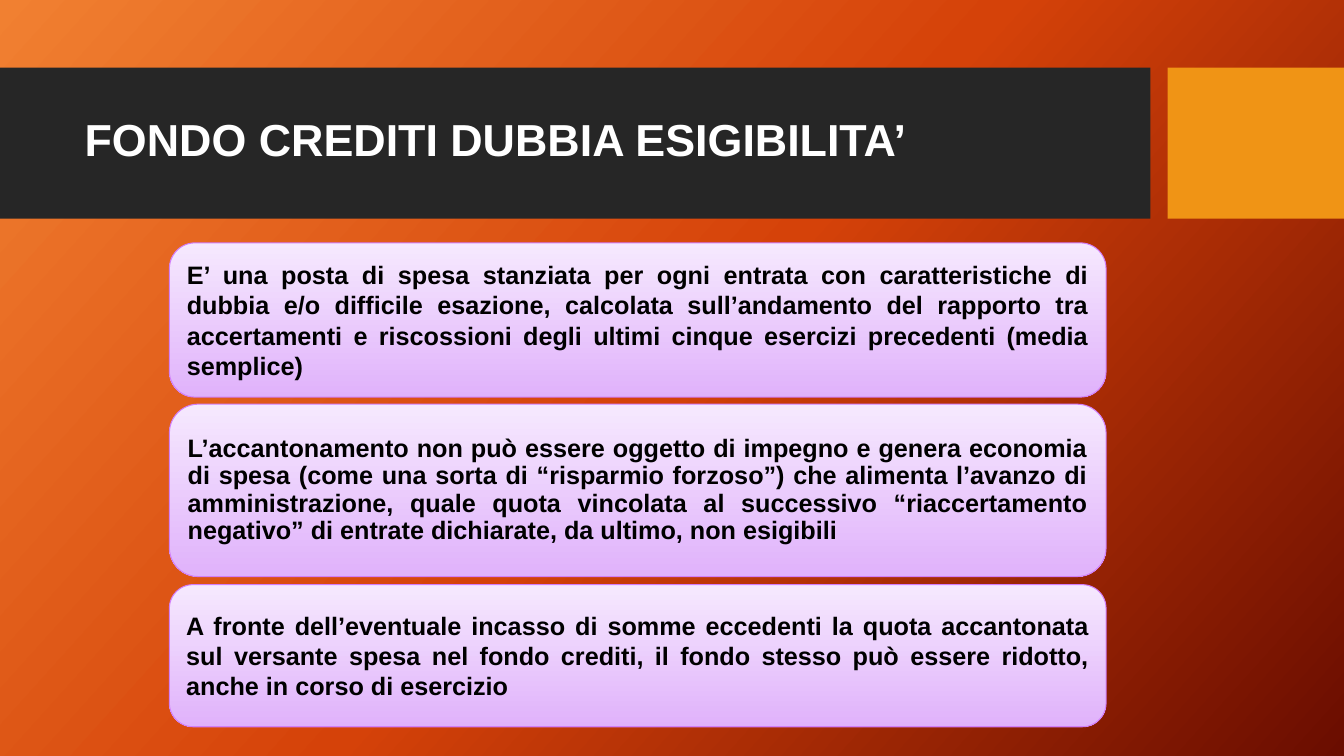
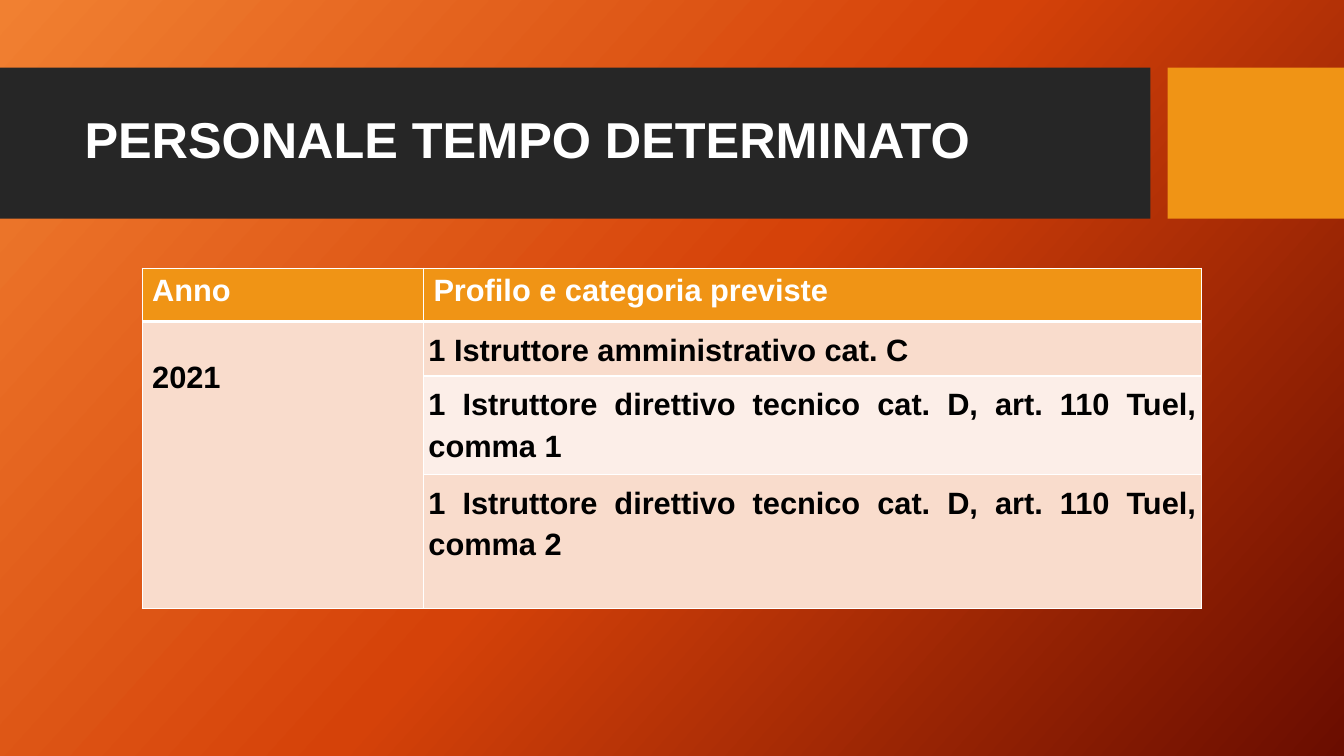
"""Build two budget slides: doubtful credit fund and fixed-term staff."""
import pptx
import pptx.dml.color
import pptx.enum.shapes
import pptx.enum.text
import pptx.oxml.ns
import pptx.util
from lxml import etree

Inches, Pt = pptx.util.Inches, pptx.util.Pt
PP_ALIGN = pptx.enum.text.PP_ALIGN
MIDDLE = pptx.enum.text.MSO_ANCHOR.MIDDLE
SHAPES = pptx.enum.shapes.MSO_SHAPE
qn = pptx.oxml.ns.qn

COLORS = {
    "band": "262626", "accent": "F09415", "white": "FFFFFF", "black": "000000",
    "card_line": "D17DF9", "row_dark": "F9DCCC", "row_light": "FCEEE8",
}
BACKGROUND = [(0, "F18031"), (50, "D54209"), (100, "6A0D00")]
CARD_GRADIENT = [(0, "F6E9FE"), (100, "E0B2FB")]
FONT = "Arial"

FUND_TITLE = ("FONDO CREDITI DUBBIA ESIGIBILITA’", 32)
FUND_CARDS = [
    (2.41, 1.53, None,
     "E’ una posta di spesa stanziata per ogni entrata con caratteristiche di dubbia e/o "
     "difficile esazione, calcolata sull’andamento del rapporto tra accertamenti e "
     "riscossioni degli ultimi cinque esercizi precedenti (media semplice)"),
    (4.01, 1.71, 0.9,
     "L’accantonamento non può essere oggetto di impegno e genera economia di spesa (come "
     "una sorta di “risparmio forzoso”) che alimenta l’avanzo di amministrazione, quale "
     "quota vincolata al successivo “riaccertamento negativo” di entrate dichiarate, da "
     "ultimo, non esigibili"),
    (5.8, 1.41, None,
     "A fronte dell’eventuale incasso di somme eccedenti la quota accantonata sul versante "
     "spesa nel fondo crediti, il fondo stesso può essere ridotto, anche in corso di "
     "esercizio"),
]
STAFF_TITLE = ("PERSONALE TEMPO DETERMINATO", 36)
STAFF_HEADER = ["Anno", "Profilo e categoria previste"]
STAFF_YEAR = "2021"
STAFF_PROFILES = [
    "1 Istruttore amministrativo cat. C",
    "1 Istruttore direttivo tecnico cat. D, art. 110 Tuel, comma 1",
    "1 Istruttore direttivo tecnico cat. D, art. 110 Tuel, comma 2",
]
STAFF_WIDTHS = [2.79, 7.72]
STAFF_HEIGHTS = [0.53, 0.52, 0.92, 1.33]


def rgb(name):
    return pptx.dml.color.RGBColor.from_string(COLORS[name])


def box(*lengths):
    return [Inches(length) for length in lengths]


def paint_gradient(fill, owner, stops, clockwise):
    fill.gradient()
    fill.gradient_angle = 360 - clockwise
    stop_list = next(owner.iter(qn("a:gsLst")))
    for old_stop in list(stop_list):
        stop_list.remove(old_stop)
    for percent, color in stops:
        stop = etree.SubElement(stop_list, qn("a:gs"), pos=str(percent * 1000))
        etree.SubElement(stop, qn("a:srgbClr"), val=color)


def write(frame, text, size, color, align=PP_ALIGN.LEFT, spacing=None):
    frame.word_wrap = True
    paragraph = frame.paragraphs[0]
    paragraph.alignment = align
    if spacing:
        paragraph.line_spacing = spacing
    run = paragraph.add_run()
    run.text = text
    run.font.name, run.font.size, run.font.bold = FONT, Pt(size), True
    run.font.color.rgb = rgb(color)


def add_titled_slide(deck, title, size):
    slide = deck.slides.add_slide(deck.slide_layouts[6])
    for left, width, color in [(0, 11.41, "band"), (11.58, 1.75, "accent")]:
        band = slide.shapes.add_shape(SHAPES.RECTANGLE, *box(left, 0.67, width, 1.5))
        band.shadow.inherit = False
        band.fill.solid()
        band.fill.fore_color.rgb = rgb(color)
        band.line.fill.background()
    heading = slide.shapes.add_textbox(*box(0.74, 0.82, 10.51, 1.18)).text_frame
    heading.vertical_anchor = MIDDLE
    write(heading, title, size, "white", spacing=0.9)
    return slide


def add_card(slide, top, height, spacing, text):
    card = slide.shapes.add_shape(SHAPES.ROUNDED_RECTANGLE, *box(1.68, top, 9.29, height))
    card.shadow.inherit = False
    paint_gradient(card.fill, card.element, CARD_GRADIENT, 90)
    card.line.color.rgb = rgb("card_line")
    card.line.width = Pt(0.75)
    card.text_frame.vertical_anchor = MIDDLE
    write(card.text_frame, text, 18, "black", PP_ALIGN.JUSTIFY, spacing)


def style_cell(cell, fill, top, bottom):
    cell.fill.solid()
    cell.fill.fore_color.rgb = rgb(fill)
    properties = cell._tc.get_or_add_tcPr()
    sides = [("L", 1), ("R", 1), ("T", top), ("B", bottom)]
    for index, (side, width) in enumerate(sides):
        border = etree.Element(qn(f"a:ln{side}"), w=str(Pt(width)))
        solid = etree.SubElement(border, qn("a:solidFill"))
        etree.SubElement(solid, qn("a:srgbClr"), val=COLORS["white"])
        properties.insert(index, border)


def add_staff_table(slide):
    area = box(1.41, 2.66, sum(STAFF_WIDTHS), sum(STAFF_HEIGHTS))
    staff = slide.shapes.add_table(len(STAFF_HEIGHTS), len(STAFF_WIDTHS), *area).table
    for column, width in zip(staff.columns, STAFF_WIDTHS):
        column.width = Inches(width)
    for row, height in zip(staff.rows, STAFF_HEIGHTS):
        row.height = Inches(height)

    for index, label in enumerate(STAFF_HEADER):
        header = staff.cell(0, index)
        style_cell(header, "accent", 1, 3)
        write(header.text_frame, label, 22, "white")

    for row, profile in enumerate(STAFF_PROFILES, 1):
        top = 3 if row == 1 else 1
        style_cell(staff.cell(row, 0), "row_dark", top, 1)
        cell = staff.cell(row, 1)
        style_cell(cell, "row_dark" if row % 2 else "row_light", top, 1)
        cell.margin_left = cell.margin_right = Inches(0.05)
        cell.margin_top = cell.margin_bottom = Inches(0.05)
        write(cell.text_frame, profile, 22, "black", PP_ALIGN.JUSTIFY, 1.2)

    year = staff.cell(1, 0)
    year.merge(staff.cell(len(STAFF_PROFILES), 0))
    year.margin_top = Inches(0.39)
    write(year.text_frame, STAFF_YEAR, 22, "black")


def main():
    deck = pptx.Presentation()
    deck.slide_width, deck.slide_height = box(13.33, 7.5)
    master = deck.slide_master
    paint_gradient(master.background.fill, master.element, BACKGROUND, 42)

    fund = add_titled_slide(deck, *FUND_TITLE)
    for card in FUND_CARDS:
        add_card(fund, *card)

    add_staff_table(add_titled_slide(deck, *STAFF_TITLE))
    deck.save("out.pptx")


if __name__ == "__main__":
    main()
